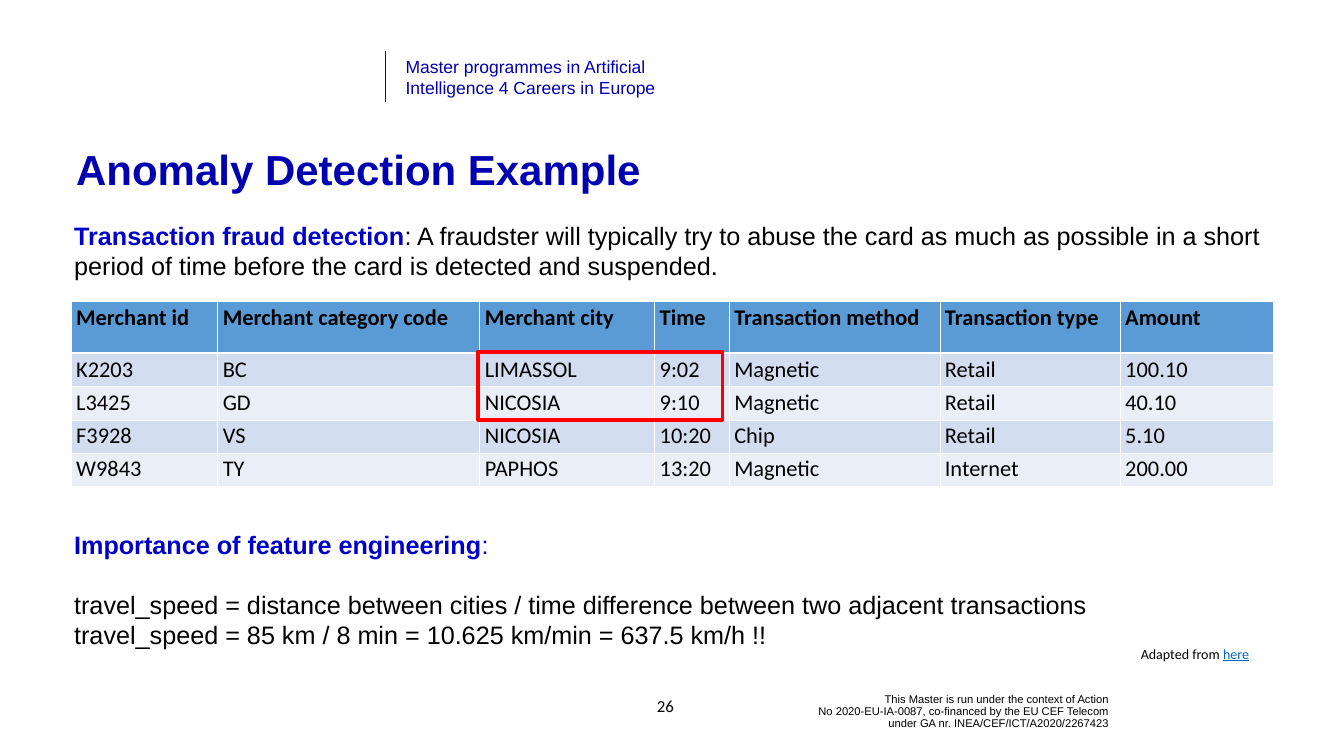
"""Build the anomaly detection example slide with its transaction table."""
from lxml import etree
from pptx import Presentation, util as u
from pptx.dml.color import RGBColor
from pptx.enum import shapes, text
from pptx.oxml import ns

theme = {
    "title": {"name": "Arial", "size": 60, "color": "0000B0", "bold": True},
    "brand": {"name": "Arial", "size": 25, "color": "0000B0"},
    "lead": {"name": "Arial", "size": 36, "color": "0100C8", "bold": True},
    "colon": {"name": "Arial", "size": 36, "color": "0100C8", "bold": False},
    "body": {"name": "Arial", "size": 36, "color": "000000"},
    "head": {"name": "Calibri", "size": 32, "color": "000000", "bold": True},
    "cell": {"name": "Calibri", "size": 32, "color": "000000", "bold": False},
    "page": {"name": "Calibri", "size": 24, "color": "000000"},
    "foot": {"name": "Arial", "size": 16, "color": "000000"},
    "note": {"name": "Calibri", "size": 20, "color": "000000"},
    "link": {"name": "Calibri", "size": 20, "color": "0563C1", "underline": True},
    "fills": ["5B9BD5", "D2DEEF", "EAEFF7"],
    "rule": "0000B0", "mark": "FF0000", "grid": "FFFFFF",
}

deck = Presentation()
deck.slide_width, deck.slide_height = u.Inches(26.67), u.Inches(15)
slide = deck.slides.add_slide(deck.slide_layouts[5])
col, row = deck.slide_width / 100, deck.slide_height / 100
left, wide = 5.29, 89.43


def place(x, y, w, h):
    """Turn shares of the slide into lengths."""
    return [round(n) for n in (x * col, y * row, w * col, h * row)]


def write(frame, paras, **look):
    """Fill a frame with paragraphs of (text, style) runs."""
    frame.word_wrap = True
    for key, val in look.items():
        setattr(frame, key, val)
    for i, runs in enumerate(paras):
        para = frame.paragraphs[0] if i == 0 else frame.add_paragraph()
        for words, style in runs:
            for j, line in enumerate(words.split("\n")):
                if j:
                    para.add_line_break()
                run = para.add_run()
                run.text = line
                for key, val in theme[style].items():
                    if key == "color":
                        run.font.color.rgb = RGBColor.from_string(val)
                    else:
                        setattr(run.font, key, u.Pt(val) if key == "size" else val)
    return frame.paragraphs


title = slide.shapes.title
title.left, title.top, title.width, title.height = place(left, 18.87, 88.53, 8.47)
head = write(title.text_frame, [[("Anomaly Detection Example", "title")]],
             vertical_anchor=text.MSO_ANCHOR.TOP, auto_size=text.MSO_AUTO_SIZE.NONE)[0]
head.alignment, head.line_spacing = text.PP_ALIGN.LEFT, u.Pt(70)

mid = {"vertical_anchor": text.MSO_ANCHOR.MIDDLE}
slim = mid | {f"margin_{s}": u.Inches(0.06) for s in ("left", "top", "right", "bottom")}
boxes = {
    "brand": ((29.81, 7.07, 23.88, 6.27), {}, [
        [("Master programmes in Artificial\nIntelligence 4 Careers in Europe", "brand")]]),
    "foot": ((56.32, 91.6, 26.55, 5.07), mid, [
        [("This Master is run under the context of Action\n"
          "No 2020-EU-IA-0087, co-financed by the EU CEF Telecom\n"
          "under GA nr. INEA/CEF/ICT/A2020/2267423", "foot")]]),
    "page": ((47.43, 90.73, 4.16, 5.33), mid, [[("26", "page")]]),
    "intro": ((left, 28.73, wide, 8.8), slim, [
        [("Transaction fraud detection", "lead"),
         (": A fraudster will typically try to abuse the card as much as possible in a "
          "short period of time before the card is detected and suspended.", "body")]]),
    "speed": ((left, 69.53, wide, 16.93), slim, [
        [("Importance of feature engineering", "lead"), (":", "colon")],
        [("travel_speed = distance between cities / time difference between two "
          "adjacent transactions", "body")],
        [("travel_speed = 85 km / 8 min = 10.625 km/min = 637.5 km/h !!", "body")]]),
    "note": ((84.51, 85, 9.3, 2.93), {}, [[("Adapted from ", "note"), ("here", "link")]]),
}
lines = {}
for name, (spot, look, paras) in boxes.items():
    box = slide.shapes.add_textbox(*place(*spot))
    lines[name] = write(box.text_frame, paras, **look)
lines["foot"][0].alignment, lines["foot"][0].line_spacing = text.PP_ALIGN.RIGHT, 0.9
lines["page"][0].alignment = text.PP_ALIGN.CENTER
lines["speed"][1].space_before = u.Pt(42)

x, top, _, low = place(28.68, 6.73, 0, 13.53)
rule = slide.shapes.add_connector(shapes.MSO_CONNECTOR.STRAIGHT, x, top, x, low)
rule.line.color.rgb, rule.line.width = RGBColor.from_string(theme["rule"]), u.Pt(0.5)
etree.SubElement(rule.line._get_or_add_ln().getparent(), ns.qn("a:effectLst"))

data = [
    ["Merchant id", "Merchant category code", "Merchant city", "Time",
     "Transaction method", "Transaction type", "Amount"],
    ["K2203", "BC", "LIMASSOL", "9:02", "Magnetic", "Retail", "100.10"],
    ["L3425", "GD", "NICOSIA", "9:10", "Magnetic", "Retail", "40.10"],
    ["F3928", "VS", "NICOSIA", "10:20", "Chip", "Retail", "5.10"],
    ["W9843", "TY", "PAPHOS", "13:20", "Magnetic", "Internet", "200.00"],
]
widths = [10.91, 19.5, 13.01, 5.55, 15.67, 13.42, 11.36]
table = slide.shapes.add_table(len(data), len(widths), *place(left, 39.87, wide, 24.53)).table
for c, share in enumerate(widths):
    table.columns[c].width = round(share * col)
for r, values in enumerate(data):
    table.rows[r].height = round((4.4 if r else 6.87) * row)
    for c, value in enumerate(values):
        cell = table.cell(r, c)
        write(cell.text_frame, [[(value, "cell" if r else "head")]])
        props = cell._tc.get_or_add_tcPr()
        for side in "LRTB":
            thick = 3 if (r, side) in ((0, "B"), (1, "T")) else 1
            edge = etree.SubElement(props, ns.qn(f"a:ln{side}"), w=str(u.Pt(thick)))
            paint = etree.SubElement(edge, ns.qn("a:solidFill"))
            etree.SubElement(paint, ns.qn("a:srgbClr"), val=theme["grid"])
        cell.fill.solid()
        shade = theme["fills"][2 - r % 2 if r else 0]
        cell.fill.fore_color.rgb = RGBColor.from_string(shade)

mark = slide.shapes.add_shape(shapes.MSO_SHAPE.RECTANGLE, *place(35.58, 46.53, 18.19, 9))
mark.shadow.inherit = False
mark.fill.background()
mark.line.color.rgb, mark.line.width = RGBColor.from_string(theme["mark"]), u.Pt(5)

deck.save("out.pptx")
